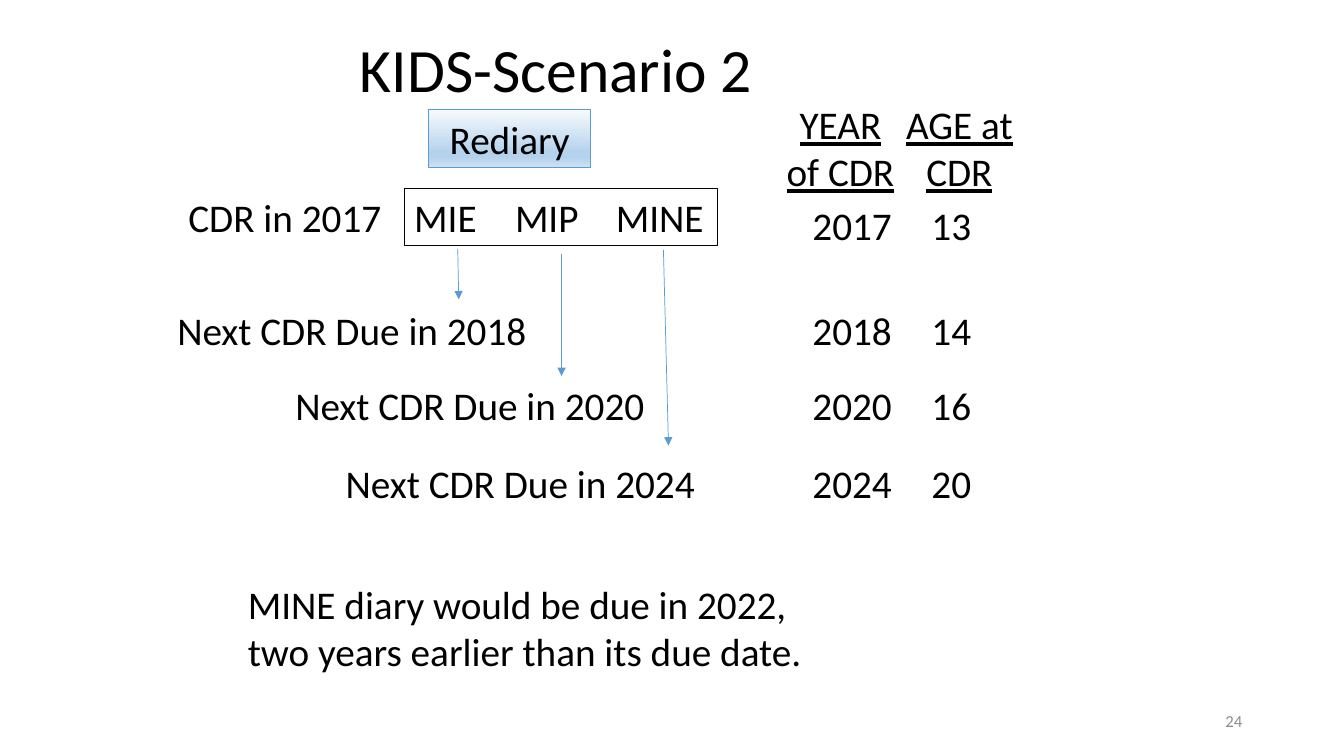
"""Build the KIDS-Scenario 2 slide on rediary dates."""
from lxml import etree
from pptx import Presentation
from pptx import util as u
from pptx.dml.color import RGBColor
from pptx.enum import shapes, text
from pptx.oxml.ns import qn

BLACK = RGBColor(0, 0, 0)
GRAY = RGBColor(0x8C, 0x8C, 0x8C)
BLUE = RGBColor(0x5B, 0x9B, 0xD5)
GRADIENT = [(0, RGBColor(0xF7, 0xFA, 0xFD)), (74, RGBColor(0xB5, 0xD2, 0xEC)),
            (83, RGBColor(0xB5, 0xD2, 0xEC)), (100, RGBColor(0xCE, 0xE1, 0xF2))]
FONT = "Calibri"
LEFT, CENTER, RIGHT = text.PP_ALIGN.LEFT, text.PP_ALIGN.CENTER, text.PP_ALIGN.RIGHT

LINE_HEIGHT, HEADER_HEIGHT = 0.57, 1.04
DIARY_TOP = 1.87
YEAR_LEFT, YEAR_WIDTH, AGE_TAB = 7.96, 1.92, 1.18
HEADER_LEFT, HEADER_TOP, HEADER_WIDTH, HEADER_STEP = 7.69, 0.95, 1.29, 1.18

TITLE = "KIDS-Scenario 2"
DIARIES = ["MIE", "MIP", "MINE"]
HEADERS = ["YEAR of CDR", "AGE at CDR"]
NOTE = "MINE diary would be due in 2022, two years earlier than its due date."
YEARS = [("2017", "13", 1.95), ("2018", "14", 2.99), ("2020", "16", 3.73), ("2024", "20", 4.51)]
DUE_DATES = [("CDR in 2017", 1.77, 1.87, 2.13), ("Next CDR Due in 2018", 1.66, 2.99, 3.78),
             ("Next CDR Due in 2020", 2.83, 3.73, 3.71), ("Next CDR Due in 2024", 3.33, 4.51, 4.06)]
ARROWS = [(4.54, 2.47, 4.55, 2.97), (5.57, 2.52, 5.57, 3.73), (6.58, 2.48, 6.63, 4.42)]


def inches(*lengths):
    return [u.Inches(length) for length in lengths]


def write(shape, words, size=28, color=BLACK, align=LEFT, underline=None, tabs=(),
          anchor=text.MSO_ANCHOR.TOP):
    frame = shape.text_frame
    frame.word_wrap = True
    frame.vertical_anchor = anchor
    paragraph = frame.paragraphs[0]
    paragraph.alignment = align
    if tabs:
        tab_list = etree.SubElement(paragraph._p.get_or_add_pPr(), qn("a:tabLst"))
        for position in tabs:
            etree.SubElement(tab_list, qn("a:tab"), pos=str(u.Inches(position)), algn="l")
    run = paragraph.add_run()
    run.text = words
    font = run.font
    font.name, font.size, font.underline = FONT, u.Pt(size), underline
    font.color.rgb = color
    return paragraph


def add_text(slide, words, box, **style):
    write(slide.shapes.add_textbox(*inches(*box)), words, **style)


def add_box(slide, words, box, line_color, **style):
    shape = slide.shapes.add_shape(shapes.MSO_SHAPE.RECTANGLE, *inches(*box))
    shape.shadow.inherit = False
    shape.fill.background()
    shape.line.color.rgb = line_color
    shape.line.width = u.Pt(0.75)
    write(shape, words, **style)
    return shape


def fill_gradient(shape):
    shape.fill.gradient()
    shape.fill.gradient_angle = 270
    stops = shape._element.spPr.find(qn("a:gradFill")).find(qn("a:gsLst"))
    for stop in list(stops):
        stops.remove(stop)
    for percent, color in GRADIENT:
        stop = etree.SubElement(stops, qn("a:gs"), pos=str(percent * 1000))
        etree.SubElement(stop, qn("a:srgbClr"), val=str(color))


def add_arrow(slide, ends):
    arrow = slide.shapes.add_connector(shapes.MSO_CONNECTOR.STRAIGHT, *inches(*ends))
    arrow.line.color.rgb = BLUE
    arrow.line.width = u.Pt(0.5)
    etree.SubElement(arrow.line._get_or_add_ln(), qn("a:tailEnd"), type="triangle")
    etree.SubElement(arrow._element.spPr, qn("a:effectLst"))


def main():
    presentation = Presentation()
    presentation.slide_width, presentation.slide_height = inches(13.33, 7.5)
    slide = presentation.slides.add_slide(presentation.slide_layouts[5])

    title = slide.shapes.title
    title.left, title.top, title.width, title.height = inches(3.47, 0.31, 4.2, 0.82)
    write(title, TITLE, size=44, anchor=text.MSO_ANCHOR.MIDDLE).line_spacing = 0.9

    rediary = add_box(slide, "Rediary", (4.25, 1.09, 1.61, LINE_HEIGHT), BLUE, align=CENTER)
    fill_gradient(rediary)
    add_box(slide, "\t".join(DIARIES), (4.01, DIARY_TOP, 3.11, LINE_HEIGHT), BLACK, tabs=(1, 2))

    for words, left, top, width in DUE_DATES:
        add_text(slide, words, (left, top, width, LINE_HEIGHT))
    for ends in ARROWS:
        add_arrow(slide, ends)

    for column, words in enumerate(HEADERS):
        left = HEADER_LEFT + column * HEADER_STEP
        add_text(slide, words, (left, HEADER_TOP, HEADER_WIDTH, HEADER_HEIGHT),
                 align=CENTER, underline=True)
    for year, age, top in YEARS:
        add_text(slide, f"{year}\t{age}", (YEAR_LEFT, top, YEAR_WIDTH, LINE_HEIGHT), tabs=(AGE_TAB,))

    add_text(slide, NOTE, (2.36, 5.71, 5.81, HEADER_HEIGHT))
    add_text(slide, "24", (9.42, 6.95, 3, 0.4), size=12, color=GRAY, align=RIGHT,
             anchor=text.MSO_ANCHOR.MIDDLE)
    presentation.save("out.pptx")


if __name__ == "__main__":
    main()
